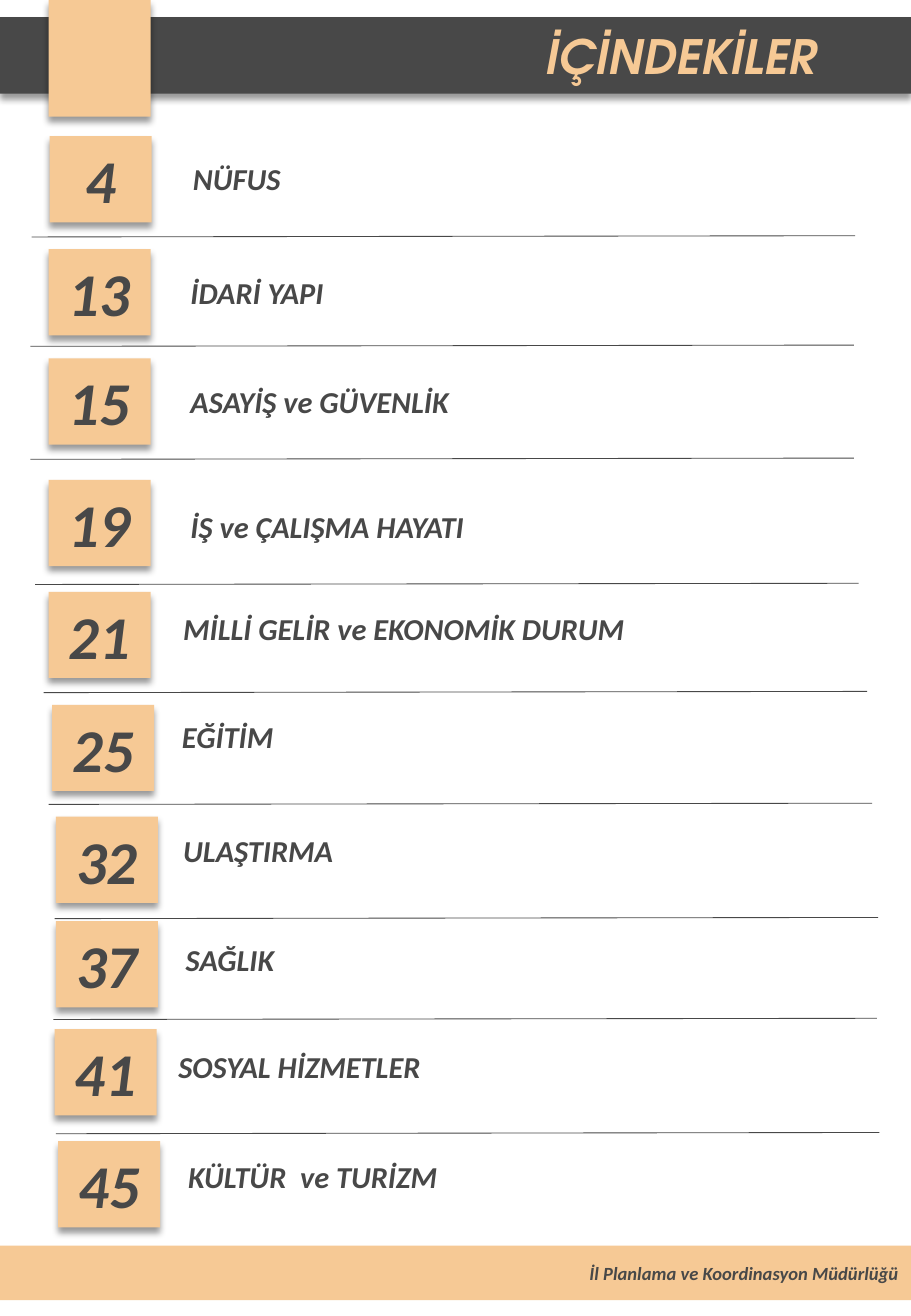
from typing import NamedTuple

from lxml import etree
from pptx import Presentation
from pptx.dml.color import RGBColor
from pptx.enum.shapes import MSO_CONNECTOR as Connector, MSO_SHAPE as Preset
from pptx.enum.text import MSO_ANCHOR as Anchor, MSO_AUTO_SIZE as AutoSize, PP_ALIGN as Align
from pptx.oxml.ns import qn
from pptx.util import Inches, Pt

CHARCOAL = RGBColor(0x48, 0x48, 0x48)
PEACH = RGBColor(0xF6, 0xC9, 0x95)
PAGE_WIDTH, PAGE_HEIGHT = 7.5, 10.83
BADGE_SIZE = (0.84, 0.71)
RULE_WIDTH, RULE_RISE = 6.78, 0.01


class Entry(NamedTuple):
    page: str
    topic: str
    badge: tuple
    label: tuple
    rule: tuple = None


ENTRIES = [
    Entry("4", "NÜFUS", (0.41, 1.12), (1.49, 1.27), (0.26, 1.95)),
    Entry("13", "İDARİ YAPI", (0.4, 2.05), (1.47, 2.21), (0.25, 2.85)),
    Entry("15", "ASAYİŞ ve GÜVENLİK", (0.4, 2.95), (1.47, 3.1), (0.25, 3.78)),
    Entry("19", "İŞ ve ÇALIŞMA HAYATI", (0.4, 3.95), (1.47, 4.13), (0.29, 4.81)),
    Entry("21", "MİLLİ GELİR ve EKONOMİK DURUM", (0.4, 4.87), (1.41, 4.97), (0.36, 5.7)),
    Entry("25", "EĞİTİM", (0.43, 5.8), (1.4, 5.86), (0.4, 6.62)),
    Entry("32", "ULAŞTIRMA", (0.46, 6.72), (1.41, 6.8), (0.45, 7.56)),
    Entry("37", "SAĞLIK", (0.46, 7.58), (1.43, 7.7), (0.44, 8.39)),
    Entry("41", "SOSYAL HİZMETLER", (0.45, 8.47), (1.37, 8.58), (0.46, 9.33)),
    Entry("45", "KÜLTÜR  ve TURİZM", (0.48, 9.39), (1.45, 9.48)),
]


class ContentsPage:
    body_font = "Calibri"
    title_font = "TeX Gyre Adventor"

    def __init__(self, slide):
        self.slide = slide

    def add_text(self, shape, text, size, color=CHARCOAL, font=body_font,
                 align=Align.LEFT, anchor=Anchor.MIDDLE, grow=False):
        frame = shape.text_frame
        frame.word_wrap = True
        frame.auto_size = AutoSize.SHAPE_TO_FIT_TEXT if grow else AutoSize.NONE
        frame.vertical_anchor = anchor
        paragraph = frame.paragraphs[0]
        paragraph.alignment = align
        run = paragraph.add_run()
        run.text = text
        style = {"name": font, "size": Pt(size), "bold": True, "italic": True}
        for attribute, value in style.items():
            setattr(run.font, attribute, value)
        run.font.color.rgb = color

    def paint(self, shape, color, shadow=True):
        shape.fill.solid()
        shape.fill.fore_color.rgb = color
        shape.line.fill.background()
        shape.shadow.inherit = False
        if shadow:
            effects = shape._element.spPr.find(qn("a:effectLst"))
            outer = etree.SubElement(effects, qn("a:outerShdw"), blurRad=str(Pt(4)),
                                     dist=str(Pt(3)), dir="5400000", rotWithShape="0")
            black = etree.SubElement(outer, qn("a:srgbClr"), val="000000")
            etree.SubElement(black, qn("a:alpha"), val="40000")

    def title(self, text, top, height, text_left):
        title = self.slide.shapes.title
        box = {"left": 0, "top": top, "width": PAGE_WIDTH, "height": height}
        for side, length in box.items():
            setattr(title, side, Inches(length))
        self.paint(title, CHARCOAL)
        title.text_frame.margin_left = Inches(text_left)
        title.text_frame.margin_right = 0
        self.add_text(title, text, 28, PEACH, self.title_font, Align.CENTER)

    def block(self, left, top, width, height, shadow=True):
        block = self.slide.shapes.add_shape(
            Preset.RECTANGLE, *map(Inches, (left, top, width, height)))
        self.paint(block, PEACH, shadow)
        return block

    def label(self, text, left, top):
        label = self.slide.shapes.add_textbox(*map(Inches, (left, top, 4.44, 0.4)))
        self.add_text(label, text, 18, anchor=Anchor.TOP, grow=True)

    def rule(self, left, top):
        ends = (left, top, left + RULE_WIDTH, top - RULE_RISE)
        rule = self.slide.shapes.add_connector(Connector.STRAIGHT, *map(Inches, ends))
        rule.line.color.rgb = CHARCOAL
        rule.line.width = Pt(0.5)
        etree.SubElement(rule._element.spPr, qn("a:effectLst"))

    def entry(self, entry):
        badge = self.block(*entry.badge, *BADGE_SIZE)
        self.add_text(badge, entry.page, 36, align=Align.CENTER)
        self.label(entry.topic, *entry.label)
        if entry.rule:
            self.rule(*entry.rule)


def main():
    deck = Presentation()
    deck.slide_width, deck.slide_height = Inches(PAGE_WIDTH), Inches(PAGE_HEIGHT)
    page = ContentsPage(deck.slides.add_slide(deck.slide_layouts[5]))

    page.title("İÇİNDEKİLER", top=0.14, height=0.63, text_left=3.71)
    page.block(0.4, 0, 0.84, 0.96)
    footer = page.block(0, 10.25, PAGE_WIDTH, 0.45, shadow=False)
    page.add_text(footer, "İl Planlama ve Koordinasyon Müdürlüğü", 11, align=Align.RIGHT)
    for entry in ENTRIES:
        page.entry(entry)

    deck.save("out.pptx")


if __name__ == "__main__":
    main()
